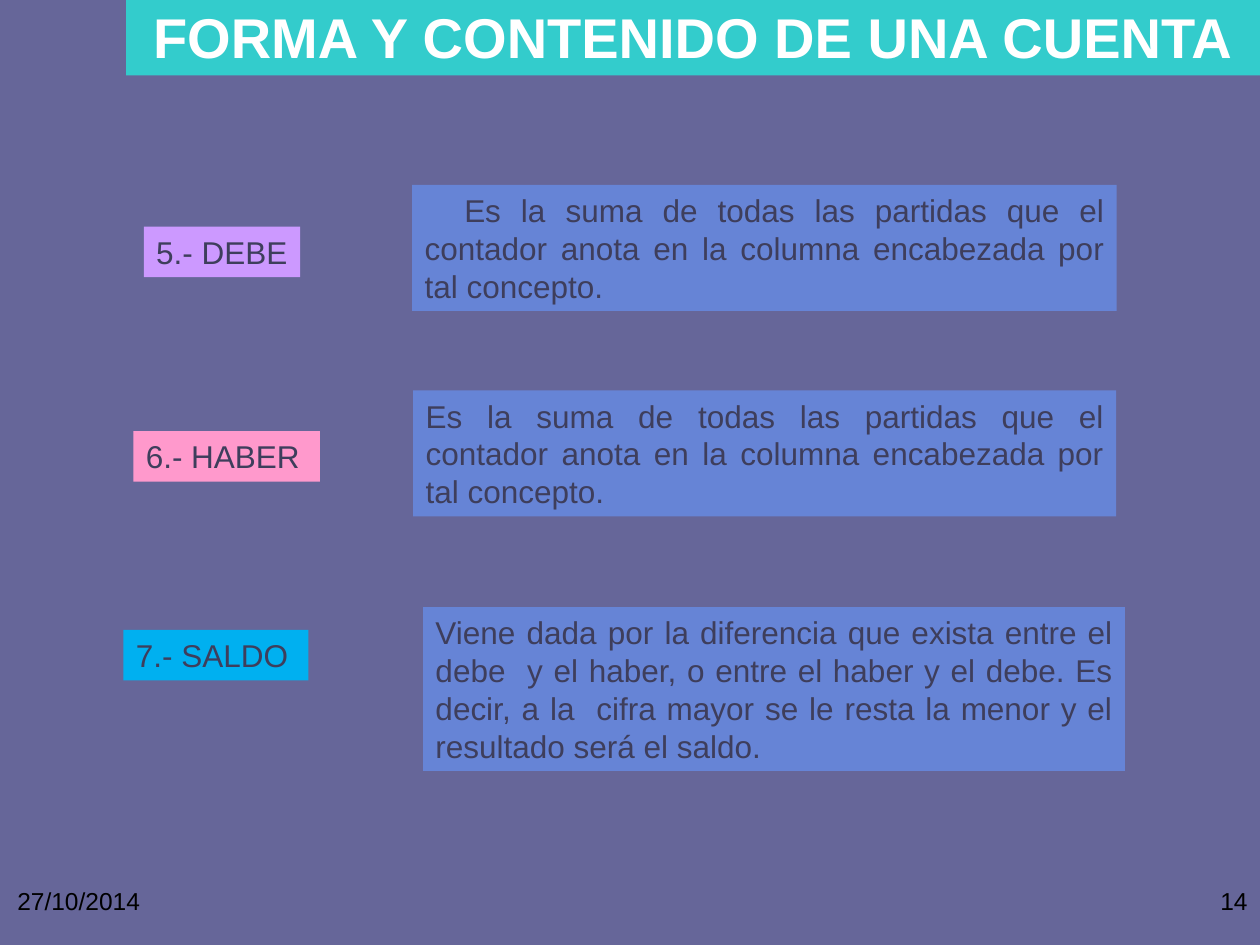
from dataclasses import dataclass
from typing import Optional

from lxml import etree
from pptx import Presentation
from pptx.dml.color import RGBColor
from pptx.enum.shapes import MSO_SHAPE
from pptx.enum.text import MSO_ANCHOR, PP_ALIGN
from pptx.oxml.ns import qn
from pptx.util import Cm, Pt

RECTANGLE = MSO_SHAPE.RECTANGLE
TOP, MIDDLE = MSO_ANCHOR.TOP, MSO_ANCHOR.MIDDLE
LEFT, CENTER = PP_ALIGN.LEFT, PP_ALIGN.CENTER
RIGHT, JUSTIFY = PP_ALIGN.RIGHT, PP_ALIGN.JUSTIFY
TITLE_ONLY_LAYOUT = 5


@dataclass(frozen=True)
class Theme:
    font: str = "Arial"
    background: str = "666699"
    title_fill: str = "33CCCC"
    title_text: str = "FFFFFF"
    definition_fill: str = "6699FF"
    definition_opacity: int = 60
    body_text: str = "3E3E5C"
    footer_text: str = "000000"
    title_size: int = 32
    body_size: int = 18
    footer_size: int = 14


@dataclass(frozen=True)
class Box:
    """Position and size in centimetres."""
    left: float
    top: float
    width: float
    height: float

    def lengths(self) -> tuple:
        return Cm(self.left), Cm(self.top), Cm(self.width), Cm(self.height)


@dataclass(frozen=True)
class AccountPart:
    term: str
    term_fill: str
    term_box: Box
    definition: str
    definition_box: Box
    first_line_indent: float = 0


THEME = Theme()
SUM_DEFINITION = ("Es la suma de todas las partidas que el contador anota "
                  "en la columna encabezada por tal concepto.")
BALANCE_DEFINITION = ("Viene dada por la diferencia que exista entre el debe  y el haber, "
                      "o entre el haber y el debe. Es decir, a la  cifra mayor se le resta "
                      "la menor y el resultado será el saldo.")
ACCOUNT_PARTS = [
    AccountPart("5.- DEBE", "CC99FF", Box(2.9, 4.57, 3.15, 1.02),
                SUM_DEFINITION, Box(8.31, 3.73, 14.2, 2.54), 0.8),
    AccountPart("6.- HABER", "FF99CC", Box(2.69, 8.69, 3.76, 1.02),
                SUM_DEFINITION, Box(8.33, 7.87, 14.17, 2.54)),
    AccountPart("7.- SALDO", "00B0F0", Box(2.49, 12.7, 3.73, 1.02),
                BALANCE_DEFINITION, Box(8.53, 12.24, 14.15, 3.3)),
]


def set_fill(fill, color: str, opacity: Optional[int] = None) -> None:
    fill.solid()
    fill.fore_color.rgb = RGBColor.from_string(color)
    if opacity is not None:
        color_element = fill._xPr.find(qn("a:solidFill"))[0]
        etree.SubElement(color_element, qn("a:alpha"), val=str(opacity * 1000))


def write_text(shape, text: str, size: int, color: str, align=LEFT,
               anchor=TOP, bold: bool = False, indent: float = 0) -> None:
    frame = shape.text_frame
    frame.word_wrap = True
    frame.vertical_anchor = anchor
    frame.text = text
    paragraph = frame.paragraphs[0]
    paragraph.alignment = align
    if indent:
        paragraph._p.get_or_add_pPr().set("indent", str(Cm(indent)))
    font = paragraph.font
    font.name, font.size, font.bold = THEME.font, Pt(size), bold
    font.color.rgb = RGBColor.from_string(color)


def add_panel(slide, box: Box, color: str, text: str, align=LEFT,
              opacity: Optional[int] = None, indent: float = 0) -> None:
    panel = slide.shapes.add_shape(RECTANGLE, *box.lengths())
    panel.shadow.inherit = False
    panel.line.fill.background()
    set_fill(panel.fill, color, opacity)
    write_text(panel, text, THEME.body_size, THEME.body_text, align, indent=indent)


def add_account_part(slide, part: AccountPart) -> None:
    add_panel(slide, part.term_box, part.term_fill, part.term)
    add_panel(slide, part.definition_box, THEME.definition_fill, part.definition,
              JUSTIFY, THEME.definition_opacity, part.first_line_indent)


def add_footer(slide, left: float, text: str, align) -> None:
    footer = slide.shapes.add_textbox(*Box(left, 17.73, 5.92, 1.32).lengths())
    write_text(footer, text, THEME.footer_size, THEME.footer_text, align)


def set_title(slide, text: str) -> None:
    title = slide.shapes.title
    title.left, title.top, title.width, title.height = Box(2.54, -0.08, 22.86, 1.6).lengths()
    set_fill(title.fill, THEME.title_fill)
    write_text(title, text, THEME.title_size, THEME.title_text, CENTER, MIDDLE, bold=True)


def main() -> None:
    deck = Presentation()
    deck.slide_width, deck.slide_height = Cm(25.4), Cm(19.05)
    slide = deck.slides.add_slide(deck.slide_layouts[TITLE_ONLY_LAYOUT])
    set_fill(slide.background.fill, THEME.background)

    # Heading band
    set_title(slide, "FORMA Y CONTENIDO DE UNA CUENTA")

    # Terms with their definitions
    for part in ACCOUNT_PARTS:
        add_account_part(slide, part)

    # Date and slide number
    add_footer(slide, 0.1, "27/10/2014", LEFT)
    add_footer(slide, 19.48, "14", RIGHT)

    deck.save("out.pptx")


if __name__ == "__main__":
    main()
